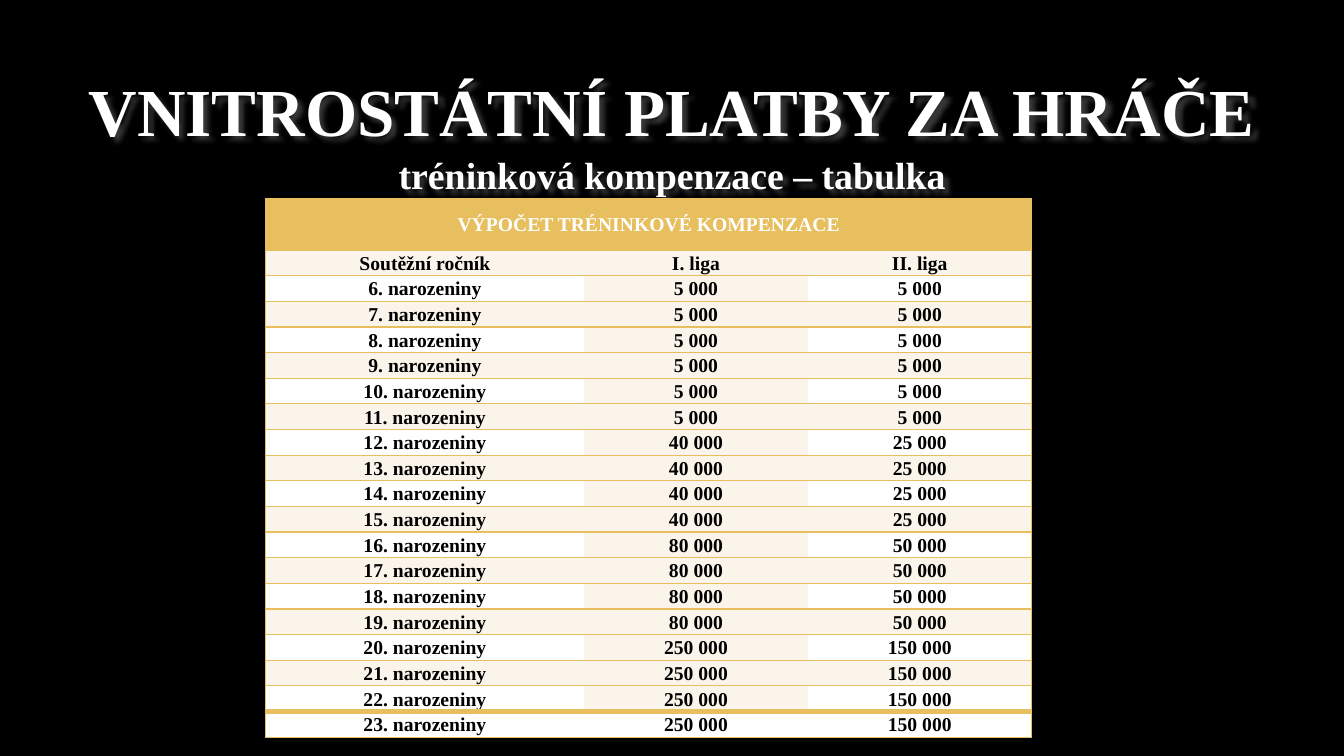
from lxml import etree
from pptx import Presentation
from pptx.dml.color import RGBColor
from pptx.enum.text import MSO_ANCHOR, PP_ALIGN
from pptx.oxml.ns import qn
from pptx.util import Cm, Pt

CENTER = PP_ALIGN.CENTER
TOP, MIDDLE = MSO_ANCHOR.TOP, MSO_ANCHOR.MIDDLE

FONT = "Times New Roman"
COLORS = {
    "black": "000000",
    "white": "FFFFFF",
    "gold": "E7BF5F",
    "cream": "FAF4EA",
    "shadow": "808080",
}

# Last birthday of each band, payment in league I and league II
BANDS = [
    (11, "5 000", "5 000"),
    (15, "40 000", "25 000"),
    (19, "80 000", "50 000"),
    (23, "250 000", "150 000"),
]
FIRST_BIRTHDAY = 6
COL_WIDTHS = [8.02, 5.64, 5.64]
HEADER_HEIGHT, BODY_HEIGHT = 1.3, 12.29


def rgb(name):
    return RGBColor.from_string(COLORS[name])


def style_runs(p, size, color):
    p.alignment = CENTER
    for r in p.runs:
        r.font.name = FONT
        r.font.size = Pt(size)
        r.font.bold = True
        r.font.color.rgb = rgb(color)


def add_soft_shadow(box):
    """Cast a blurred shadow from the text of an unfilled box."""
    effects = etree.SubElement(box._element.spPr, qn("a:effectLst"))
    shadow = etree.SubElement(effects, qn("a:outerShdw"), blurRad="38100",
                              dist="38100", dir="2700000", algn="tl")
    color = etree.SubElement(shadow, qn("a:srgbClr"), val=COLORS["shadow"])
    etree.SubElement(color, qn("a:alpha"), val="43000")


def add_title(s, title, subtitle):
    box = s.shapes.add_textbox(Cm(1.7), Cm(0.76), Cm(30.48), Cm(3.18))
    add_soft_shadow(box)
    tf = box.text_frame
    tf.word_wrap = True
    tf.vertical_anchor = TOP
    tf.margin_left = tf.margin_right = Cm(0.33)
    tf.margin_top = Cm(1)
    tf.margin_bottom = 0
    tf.text = f"{title}\n{subtitle}"
    for p, size in zip(tf.paragraphs, (48, 27)):
        style_runs(p, size, "white")
    tf.paragraphs[1].space_before = Pt(1)


def set_borders(cell, widths):
    """Draw gold borders on the sides in widths (points), none elsewhere."""
    tc_pr = cell._tc.get_or_add_tcPr()
    for i, side in enumerate("LRTB"):
        width = widths.get(side, 0)
        ln = etree.Element(qn(f"a:ln{side}"), w=str(Pt(width)))
        if width:
            fill = etree.SubElement(ln, qn("a:solidFill"))
            etree.SubElement(fill, qn("a:srgbClr"), val=COLORS["gold"])
        else:
            etree.SubElement(ln, qn("a:noFill"))
        tc_pr.insert(i, ln)


def fill_cell(cell, text, fill, color, borders):
    cell.margin_left = cell.margin_right = Cm(0.15)
    cell.margin_top = cell.margin_bottom = 0
    cell.vertical_anchor = MIDDLE
    cell.fill.solid()
    cell.fill.fore_color.rgb = rgb(fill)
    p = cell.text_frame.paragraphs[0]
    p.text = text
    p.line_spacing = 1.07
    style_runs(p, 14, color)
    set_borders(cell, borders)


def compensation_rows():
    rows = [("Soutěžní ročník", "I. liga", "II. liga")]
    start = FIRST_BIRTHDAY
    for end, first, second in BANDS:
        rows += [(f"{n}. narozeniny", first, second) for n in range(start, end + 1)]
        start = end + 1
    return rows


def add_compensation_table(s, heading, rows):
    frame = s.shapes.add_table(len(rows) + 1, len(COL_WIDTHS), Cm(6.7), Cm(5),
                               Cm(sum(COL_WIDTHS)), Cm(HEADER_HEIGHT + BODY_HEIGHT))
    table = frame.table
    table.horz_banding = False
    for col, width in zip(table.columns, COL_WIDTHS):
        col.width = Cm(width)
    for row in table.rows:
        row.height = Cm(BODY_HEIGHT / len(rows))
    table.rows[0].height = Cm(HEADER_HEIGHT)

    # Heading across all columns
    for j in range(len(COL_WIDTHS)):
        fill_cell(table.cell(0, j), heading if j == 0 else "", "gold", "white",
                  dict.fromkeys("LRTB", 1))
    table.cell(0, 0).merge(table.cell(0, len(COL_WIDTHS) - 1))

    # Banded rows with a tinted middle column; the last row is set off
    last = len(rows)
    outer_sides = ("L", "", "R")
    for i, values in enumerate(rows, start=1):
        for j, text in enumerate(values):
            tinted = i < last and (i % 2 == 1 or j == 1)
            borders = {"T": 4 if i == last else 1, "B": 4 if i == last - 1 else 1}
            if outer_sides[j]:
                borders[outer_sides[j]] = 1
            fill_cell(table.cell(i, j), text, "cream" if tinted else "white",
                      "black", borders)


def main():
    prs = Presentation()
    prs.slide_width, prs.slide_height = Cm(33.87), Cm(19.05)
    s = prs.slides.add_slide(prs.slide_layouts[6])
    s.background.fill.solid()
    s.background.fill.fore_color.rgb = rgb("black")

    add_title(s, "VNITROSTÁTNÍ PLATBY ZA HRÁČE", "tréninková kompenzace – tabulka")
    add_compensation_table(s, "VÝPOČET TRÉNINKOVÉ KOMPENZACE", compensation_rows())
    prs.save("out.pptx")


if __name__ == "__main__":
    main()
